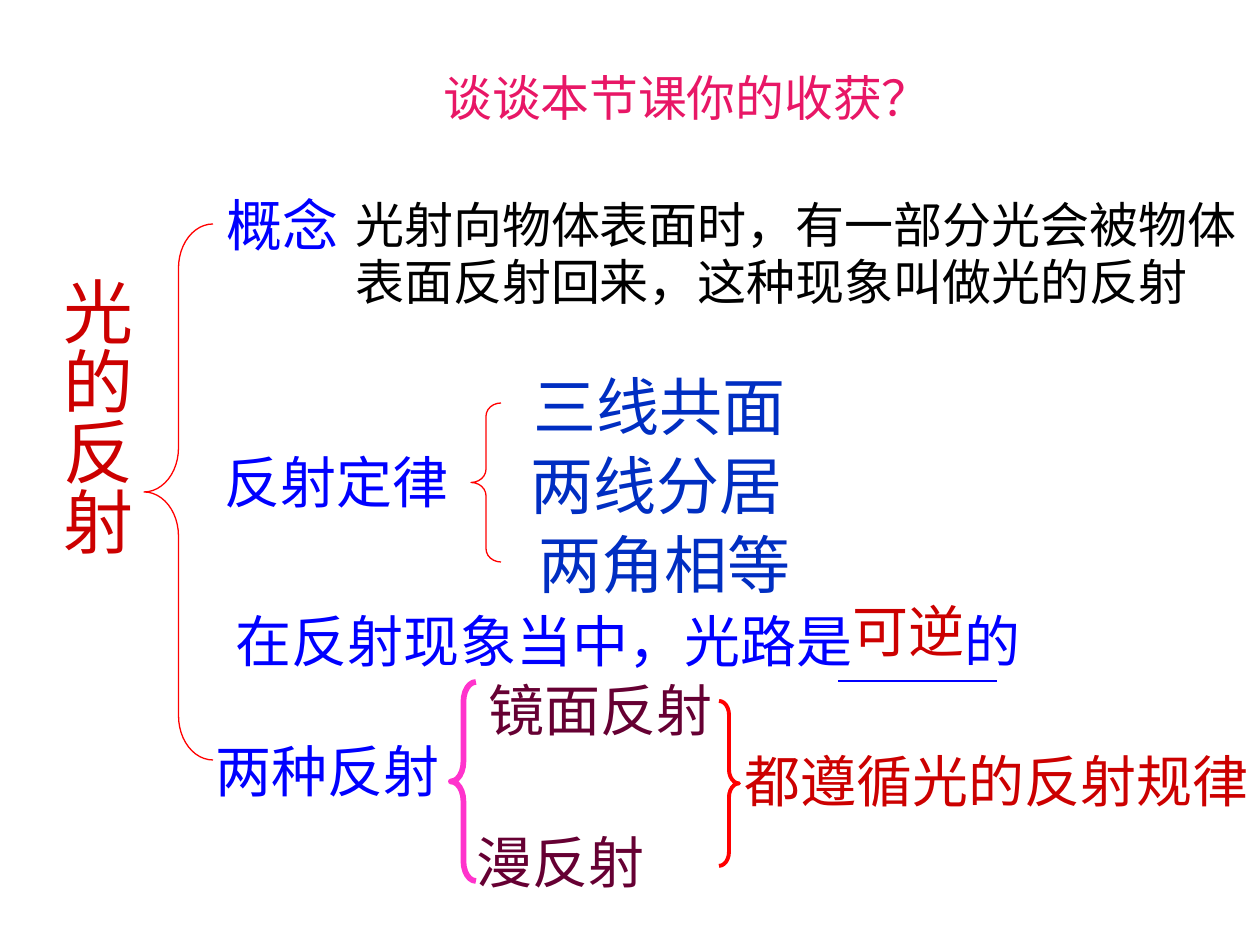
from lxml import etree
from pptx import Presentation
from pptx.dml.color import RGBColor
from pptx.enum.shapes import MSO_CONNECTOR as Connector, MSO_SHAPE as Shape
from pptx.enum.text import PP_ALIGN as Align
from pptx.oxml.ns import qn
from pptx.util import Pt

EMU_PER_PX = 914400 // 126
RED, BLUE, ROYAL, PLUM = "CC0000", "0000FF", "002EC2", "660033"
CJK = "Noto Sans CJK SC"


def px(length):
    return length * EMU_PER_PX


def color(value):
    return RGBColor.from_string(value)


class Board:
    line_height = 1.18

    def __init__(self, deck):
        self.page = deck.slides.add_slide(deck.slide_layouts[6])

    def text(self, words, place, size, ink, font="Arial", align=Align.CENTER, wrap=True):
        box = self.page.shapes.add_textbox(*map(px, place))
        box.text_frame.word_wrap = wrap
        para = box.text_frame.paragraphs[0]
        para.alignment = align
        para.line_spacing = Pt(round(size * self.line_height))
        span = para.add_run()
        span.text = words
        span.font.name = font
        span.font.size = Pt(size)
        span.font.color.rgb = color(ink)
        return box

    def vertical_text(self, words, place, size, ink):
        box = self.text(words, place, size, ink, align=Align.LEFT)
        box.text_frame.paragraphs[0].line_spacing = None
        box.text_frame._txBody.bodyPr.set("vert", "eaVert")

    def gapped_text(self, words, place, size, ink, inset, stop):
        box = self.text(words, place, size, ink, align=Align.LEFT)
        box.text_frame.margin_left = px(inset)
        properties = box.text_frame.paragraphs[0]._p.get_or_add_pPr()
        tabs = etree.SubElement(properties, qn("a:tabLst"))
        etree.SubElement(tabs, qn("a:tab"), pos=str(px(stop)), algn="l")

    def brace(self, kind, place, bend, ink, weight):
        shape = self.page.shapes.add_shape(kind, *map(px, place))
        shape.shadow.inherit = False
        shape.adjustments[0] = bend
        shape.adjustments[1] = 0.5
        shape.fill.background()
        shape.line.color.rgb = color(ink)
        shape.line.width = Pt(weight)

    def rule(self, ends, ink, weight):
        line = self.page.shapes.add_connector(Connector.STRAIGHT, *map(px, ends))
        line.line.color.rgb = color(ink)
        line.line.width = Pt(weight)
        etree.SubElement(line._element.spPr, qn("a:effectLst"))


def main():
    deck = Presentation()
    deck.slide_width, deck.slide_height = px(1260), px(945)
    board = Board(deck)

    board.vertical_text("光的反射", (34, 265, 110, 456), 40, RED)
    board.brace(Shape.LEFT_BRACE, (144, 224, 69, 536), 0.64, "FF0000", 0.75)

    board.text("概念", (184, 185, 198, 79), 32, BLUE)
    board.text("光射向物体表面时，有一部分光会被物体表面反射回来，这种现象叫做光的反射",
               (343, 189, 914, 189), 28, "000000", "Times New Roman", Align.LEFT)

    board.text("反射定律", (203, 442, 268, 79), 32, BLUE)
    board.brace(Shape.LEFT_BRACE, (471, 403, 30, 159), 0.44, "FF0000", 0.75)
    laws = [("三线共面", 491, 338), ("两线分居", 486, 341), ("两角相等", 481, 368)]
    for row, (law, left, width) in enumerate(laws):
        board.text(law, (left, 363 + 79 * row, width, 88), 36, ROYAL)

    board.gapped_text("在反射现象当中，光路是\t的", (123, 601, 1012, 79), 32, BLUE, 113, 729)
    board.rule((838, 681, 997, 681), BLUE, 0.75)
    board.text("可逆", (819, 591, 179, 79), 32, RED)

    board.text("两种反射", (203, 731, 268, 79), 32, BLUE, CJK, Align.LEFT)
    board.brace(Shape.LEFT_BRACE, (451, 682, 25, 199), 0.79, "FF33CC", 3.25)
    board.text("镜面反射", (476, 670, 689, 79), 32, PLUM, CJK, Align.LEFT)
    board.text("漫反射", (464, 822, 800, 79), 32, PLUM, CJK, Align.LEFT)
    board.brace(Shape.RIGHT_BRACE, (719, 701, 20, 165), 0.7, "FF0000", 2.25)
    board.text("都遵循光的反射规律", (719, 741, 556, 79), 32, RED)

    board.text("谈谈本节课你的收获？", (372, 62, 630, 63), 27.9, "E81766", CJK, wrap=False)

    deck.save("out.pptx")


if __name__ == "__main__":
    main()
